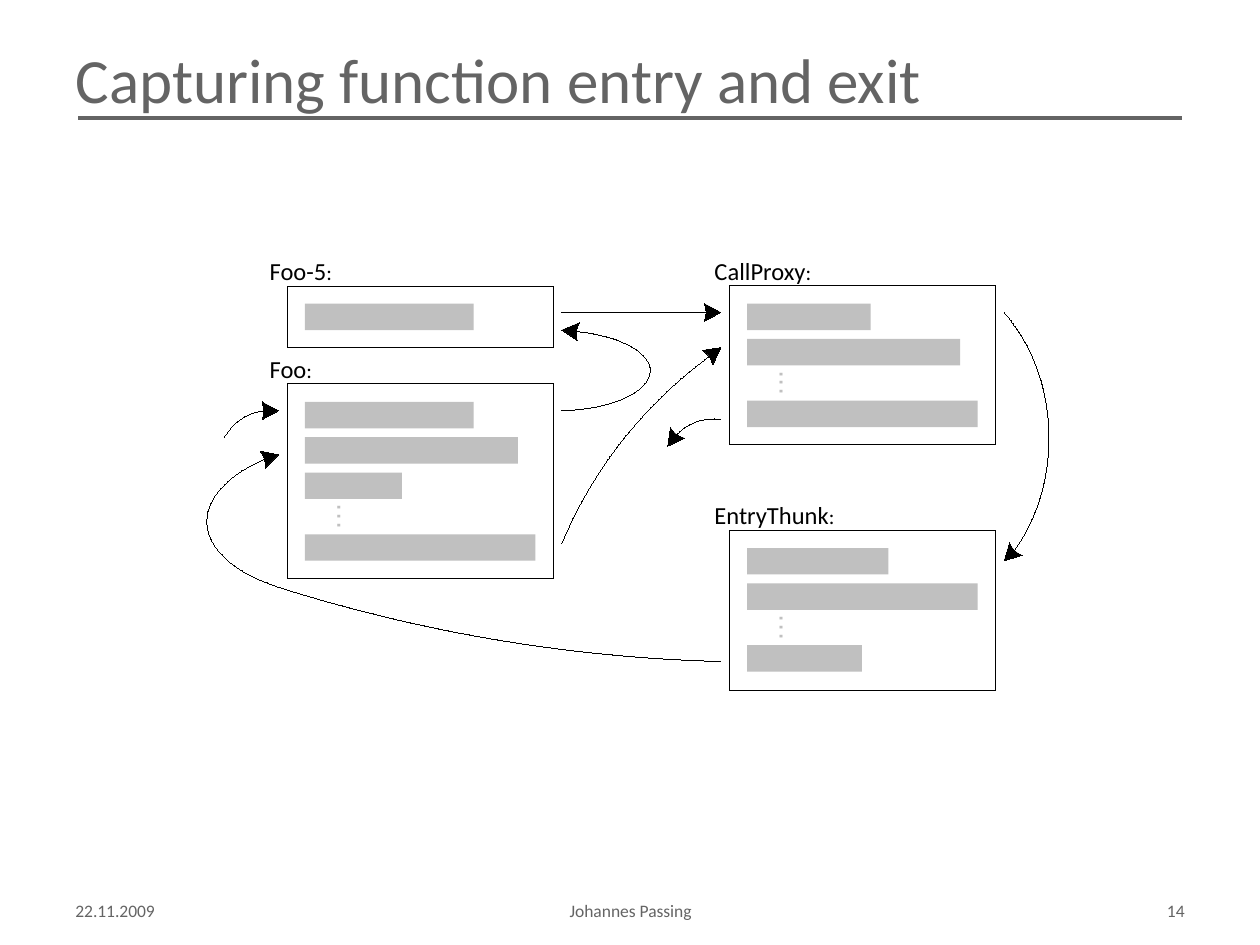
"""Build the slide on capturing function entry and exit."""
from math import hypot

from lxml.etree import SubElement
from pptx import Presentation
from pptx.dml.color import RGBColor
from pptx.enum.shapes import MSO_CONNECTOR, MSO_SHAPE
from pptx.enum.text import MSO_ANCHOR, MSO_AUTO_SIZE, PP_ALIGN
from pptx.oxml.ns import qn
from pptx.util import Inches, Pt

THEME = {
    "gray": RGBColor(0x64, 0x64, 0x64),
    "bar": RGBColor(0xC0, 0xC0, 0xC0),
    "black": RGBColor(0, 0, 0),
    "white": RGBColor(255, 255, 255),
    "font": "Calibri",
    "dot_font": "Arial",
    "title": 36,
    "label": 14,
    "colon": 12,
    "dot": 16,
    "footer": 10,
    "hairline": 0.01,
}


def write_text(shape, text, size, color, font=THEME["font"], align=PP_ALIGN.LEFT, fitted=False):
    frame = shape.text_frame
    frame.word_wrap = not fitted
    frame.vertical_anchor = MSO_ANCHOR.TOP if fitted else MSO_ANCHOR.MIDDLE
    if fitted:
        frame.auto_size = MSO_AUTO_SIZE.SHAPE_TO_FIT_TEXT
        frame.margin_left = frame.margin_right = 0
        frame.margin_top = frame.margin_bottom = 0
    para = frame.paragraphs[0]
    para.alignment = align
    span = para.add_run()
    span.text = text
    span.font.size = Pt(size)
    span.font.name = font
    span.font.color.rgb = color


def draw_outline(points, straight=0, filled=False):
    scaled = [(Inches(x), Inches(y)) for x, y in points]
    builder = page.shapes.build_freeform(*scaled[0], scale=1.0)
    builder.add_line_segments(scaled[1:], close=filled)
    outline = builder.convert_to_shape()
    outline.shadow.inherit = False
    outline.line.color.rgb = THEME["black"]
    outline.line.width = Pt(THEME["hairline"])
    if filled:
        outline.fill.solid()
        outline.fill.fore_color.rgb = THEME["black"]
    else:
        outline.fill.background()
    segments = list(outline._element.iter(qn("a:lnTo")))[straight:]
    for start in range(0, len(segments), 3):
        group = segments[start:start + 3]
        curve = SubElement(group[0].getparent(), qn("a:cubicBezTo"))
        group[0].addprevious(curve)
        for segment in group:
            curve.append(segment[0])
            segment.getparent().remove(segment)


deck = Presentation()
deck.slide_width, deck.slide_height = Inches(10), Inches(7.5)
page = deck.slides.add_slide(deck.slide_layouts[5])

title = page.shapes.title
title.left, title.top, title.width, title.height = map(Inches, (0.5, 0.3, 9, 0.64))
write_text(title, "Capturing function entry and exit", THEME["title"], THEME["gray"])

lines = [
    (0.62, 0.94, 9.38, 0.94, THEME["gray"], 2.25),
    (4.46, 2.48, 5.62, 2.48, THEME["black"], THEME["hairline"]),
]
for x1, y1, x2, y2, color, width in lines:
    line = page.shapes.add_connector(
        MSO_CONNECTOR.STRAIGHT, Inches(x1), Inches(y1), Inches(x2), Inches(y2))
    line.line.color.rgb = color
    line.line.width = Pt(width)
    SubElement(line._element.spPr, qn("a:effectLst"))

panels = [
    ("Foo-5", 2.14, 0.5, 2.28, 2.27, 0.49, 2.41, [1.34]),
    ("CallProxy", 5.67, 0.78, 5.79, 2.27, 1.26, 2.41, [0.98, 1.69, 1.83]),
    ("EntryThunk", 5.67, 0.97, 5.79, 4.21, 1.27, 4.35, [1.12, 1.83, 0.91]),
    ("Foo", 2.14, 0.34, 2.28, 3.04, 1.55, 3.19, [1.34, 1.69, 0.77, 1.83]),
]
for name, label_left, label_width, left, top, height, first_bar, bar_widths in panels:
    elided = len(bar_widths) > 1
    bar_tops = [first_bar + 0.28 * row for row in range(len(bar_widths))]
    if elided:
        bar_tops[-1] += 0.21
    blocks = [(left, top, 2.11, height, THEME["white"])] if elided else []
    blocks.append((left, top, 2.11, height, None))
    blocks += [(left + 0.14, bar_top, width, 0.21, THEME["bar"])
               for bar_top, width in zip(bar_tops, bar_widths)]
    for x, y, width, block_height, color in blocks:
        block = page.shapes.add_shape(
            MSO_SHAPE.RECTANGLE, Inches(x), Inches(y), Inches(width), Inches(block_height))
        block.shadow.inherit = False
        if color is None:
            block.fill.background()
            block.line.color.rgb = THEME["black"]
            block.line.width = Pt(THEME["hairline"])
        else:
            block.fill.solid()
            block.fill.fore_color.rgb = color
            block.line.fill.background()

    label = page.shapes.add_textbox(
        Inches(label_left), Inches(first_bar - 0.38), Inches(label_width), Inches(0.24))
    for text, size in ((name, THEME["label"]), (":", THEME["colon"])):
        write_text(label, text, size, THEME["black"], fitted=True)

    for step in range(3 if elided else 0):
        dot = page.shapes.add_textbox(
            Inches(left + 0.28), Inches(bar_tops[-1] - 0.29 - 0.07 * step),
            Inches(0.17), Inches(0.33))
        dot.rotation = 270
        write_text(dot, ".", THEME["dot"], THEME["bar"], font=THEME["dot_font"], fitted=True)

draw_outline([(5.72, 5.25), (4.54, 5.22), (3.34, 5.02), (2.21, 4.66)])
arrows = [
    ((4.46, 2.62), [(4.46, 3.26), (4.87, 3.25), (5.18, 3.1), (5.16, 2.92),
                    (5.14, 2.78), (4.89, 2.66), (4.56, 2.63)]),
    ((5.72, 2.48), [(5.62, 2.48)]),
    ((5.72, 2.76), [(4.46, 4.31), (4.71, 3.71), (5.12, 3.2), (5.64, 2.82)]),
    ((2.21, 3.26), [(1.78, 3.47), (1.86, 3.34), (1.97, 3.27), (2.11, 3.26)]),
    ((7.97, 4.45), [(7.97, 2.48), (8, 2.51), (8.02, 2.54), (8.04, 2.57),
                    (8.42, 3.07), (8.42, 3.88), (8.04, 4.38)]),
    ((2.21, 3.61), [(2.21, 4.66), (2.13, 4.63), (2.05, 4.6), (1.99, 4.57),
                    (1.48, 4.3), (1.54, 3.88), (2.11, 3.64)]),
    ((5.3, 3.54), [(5.72, 3.33), (5.58, 3.31), (5.45, 3.36), (5.36, 3.46)]),
]
for (x, y), curve in arrows:
    if len(curve) > 1:
        draw_outline(curve)
    end_x, end_y = curve[-1]
    length = hypot(x - end_x, y - end_y)
    dx, dy = (x - end_x) / length, (y - end_y) / length
    corners = [(0, 0), (0.13, 0.07), (0.11, 0.02), (0.11, -0.02), (0.13, -0.07)]
    draw_outline([(x - back * dx - side * dy, y - back * dy + side * dx)
                  for back, side in corners], straight=1, filled=True)

footers = [
    ("22.11.2009", 0.5, 2.33, PP_ALIGN.LEFT),
    ("Johannes Passing", 3.42, 3.17, PP_ALIGN.CENTER),
    ("14", 7.17, 2.33, PP_ALIGN.RIGHT),
]
for text, left, width, align in footers:
    footer = page.shapes.add_textbox(Inches(left), Inches(7.11), Inches(width), Inches(0.24))
    write_text(footer, text, THEME["footer"], THEME["gray"], align=align)

deck.save("out.pptx")
